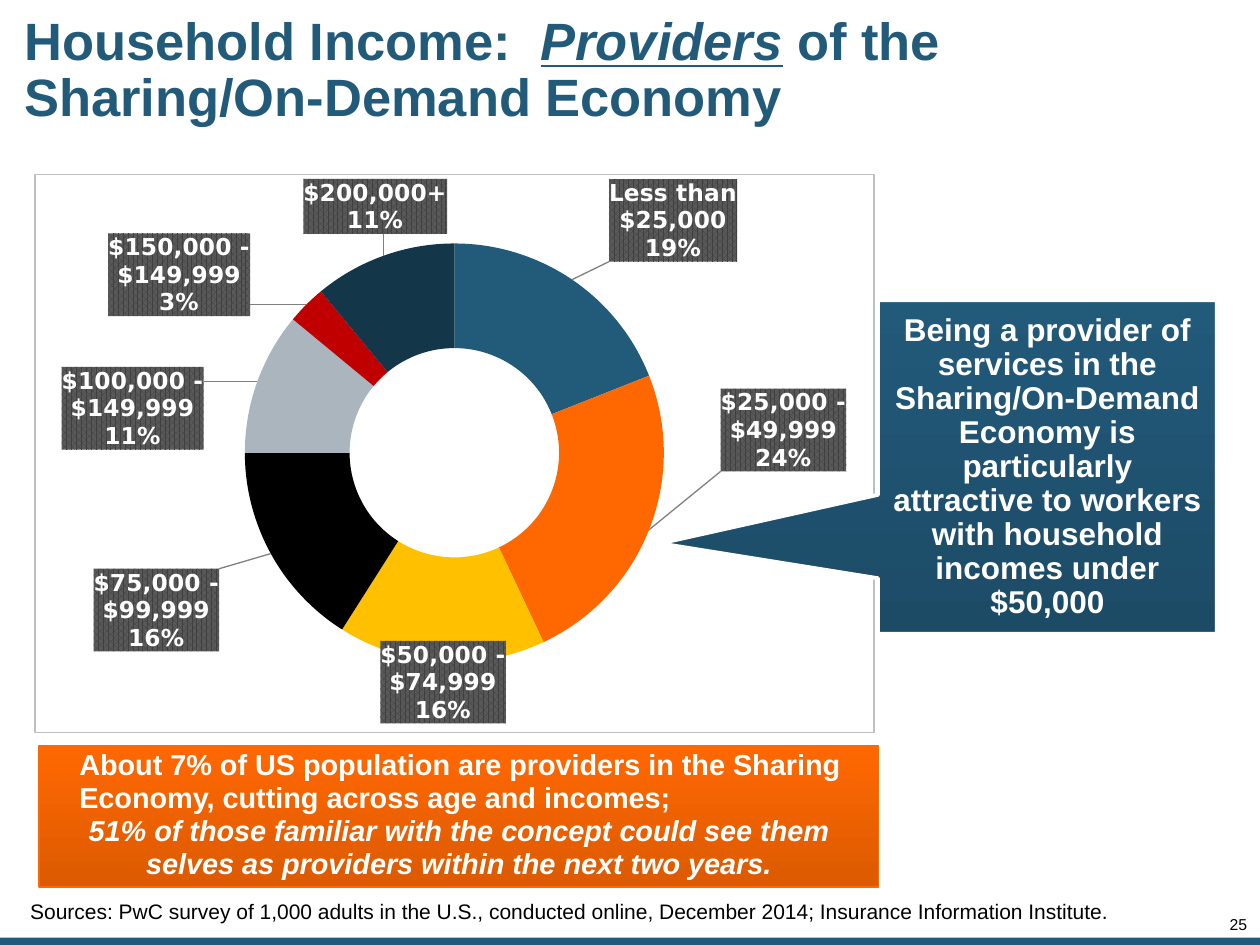
from dataclasses import dataclass
from itertools import accumulate
from math import cos, pi, sin

from pptx import Presentation
from pptx.chart.data import CategoryChartData
from pptx.dml.color import RGBColor
from pptx.enum.chart import XL_CHART_TYPE
from pptx.enum.shapes import MSO_SHAPE
from pptx.enum.text import MSO_ANCHOR, PP_ALIGN
from pptx.oxml import parse_xml
from pptx.oxml.ns import nsdecls, qn
from pptx.util import Cm, Pt

BLUE, ORANGE, WHITE, BLACK = "225A7A", "FF6801", "FFFFFF", "000000"


@dataclass
class Area:
    left: float
    top: float
    width: float
    height: float

    def lengths(self) -> tuple:
        return Cm(self.left), Cm(self.top), Cm(self.width), Cm(self.height)


@dataclass
class Style:
    size: float
    color: str
    bold: bool = False
    spacing: float = 1.0
    align: PP_ALIGN = PP_ALIGN.LEFT


@dataclass
class Bracket:
    """An income bracket; the label centre is in cm from the ring centre."""
    name: str
    percent: int
    color: str
    label_x: float
    label_y: float


CHART_AREA = Area(0.69, 3.5, 16.94, 11.28)
PLOT_X, PLOT_Y, PLOT_WIDTH, PLOT_HEIGHT = 0.25, 0.124, 0.5, 0.75
MIDDLE_RADIUS = 0.75 * CHART_AREA.width * PLOT_WIDTH / 2

BRACKETS = [
    Bracket("Less than $25,000", 19, BLUE, 4.42, -4.7),
    Bracket("$25,000 - $49,999", 24, ORANGE, 6.65, -0.46),
    Bracket("$50,000 - $74,999", 16, "FFC000", -0.23, 4.64),
    Bracket("$75,000 - $99,999", 16, BLACK, -6.02, 3.18),
    Bracket("$100,000 - $149,999", 11, "ABB5BE", -6.5, -0.9),
    Bracket("$150,000 - $149,999", 3, "C00000", -5.56, -3.6),
    Bracket("$200,000+", 11, "143649", -1.6, -4.98),
]


def rgb(color: str) -> RGBColor:
    return RGBColor.from_string(color)


def set_frame(shape, insets: tuple, anchor=MSO_ANCHOR.TOP):
    """Set wrapping, insets (left, top, right, bottom in cm) and anchor."""
    frame = shape.text_frame
    frame.word_wrap = True
    frame.vertical_anchor = anchor
    (frame.margin_left, frame.margin_top,
     frame.margin_right, frame.margin_bottom) = map(Cm, insets)
    return frame


def style_paragraph(para, style: Style) -> None:
    para.alignment = style.align
    para.line_spacing = style.spacing
    para.font.name = "Arial"
    para.font.size = Pt(style.size)
    para.font.bold = style.bold
    para.font.color.rgb = rgb(style.color)


def add_text(page, area: Area, text: str, style: Style, insets: tuple) -> None:
    box = page.shapes.add_textbox(*area.lengths())
    para = set_frame(box, insets).paragraphs[0]
    para.text = text
    style_paragraph(para, style)


def add_panel(page, kind: MSO_SHAPE, area: Area, colors: tuple,
              line: str, line_width: float):
    """Add a shape with a gradient running from top to bottom."""
    panel = page.shapes.add_shape(kind, *area.lengths())
    panel.shadow.inherit = False
    panel.fill.gradient()
    panel.fill.gradient_angle = 270
    for stop, color in zip(panel.fill.gradient_stops, colors):
        stop.color.rgb = rgb(color)
    panel.line.color.rgb = rgb(line)
    panel.line.width = Pt(line_width)
    return panel


def label_xml(index: int, bracket: Bracket, middle: float) -> str:
    """Place a label by its offset from the middle of its ring segment."""
    angle = 2 * pi * middle / 100
    x = (bracket.label_x - MIDDLE_RADIUS * sin(angle)) / CHART_AREA.width
    y = (bracket.label_y + MIDDLE_RADIUS * cos(angle)) / CHART_AREA.height
    return (f'<c:dLbl><c:idx val="{index}"/><c:layout><c:manualLayout>'
            f'<c:x val="{x:.4f}"/><c:y val="{y:.4f}"/></c:manualLayout></c:layout>'
            f'{LABEL_FORMAT}</c:dLbl>')


LABEL_FORMAT = (
    '<c:spPr><a:pattFill prst="pct75"><a:fgClr><a:srgbClr val="404040"/></a:fgClr>'
    '<a:bgClr><a:srgbClr val="595959"/></a:bgClr></a:pattFill></c:spPr>'
    '<c:txPr><a:bodyPr/><a:p><a:pPr><a:defRPr sz="1330" b="1"><a:solidFill>'
    f'<a:srgbClr val="{WHITE}"/></a:solidFill><a:latin typeface="DejaVu Sans"/>'
    '</a:defRPr></a:pPr><a:endParaRPr lang="en-US"/></a:p></c:txPr>'
    '<c:showLegendKey val="0"/><c:showVal val="0"/><c:showCatName val="1"/>'
    '<c:showSerName val="0"/><c:showPercent val="1"/><c:showBubbleSize val="0"/>'
    '<c:separator>\n</c:separator>')


def add_income_chart(page) -> None:
    data = CategoryChartData()
    data.categories = [bracket.name for bracket in BRACKETS]
    data.add_series("Series 1", [bracket.percent for bracket in BRACKETS])
    chart = page.shapes.add_chart(
        XL_CHART_TYPE.DOUGHNUT, *CHART_AREA.lengths(), data).chart
    chart.has_title = False
    chart.has_legend = False
    chart.font.size = Pt(10)
    chart.font.name = "DejaVu Sans"
    chart.font.color.rgb = rgb(BLACK)
    plot = chart.plots[0]
    plot.vary_by_categories = True
    series = plot.series[0]
    for index, bracket in enumerate(BRACKETS):
        fill = series.points[index].format.fill
        fill.solid()
        fill.fore_color.rgb = rgb(bracket.color)

    # Labels with leader lines
    ends = accumulate(bracket.percent for bracket in BRACKETS)
    labels = "".join(label_xml(index, bracket, end - bracket.percent / 2)
                     for index, (bracket, end) in enumerate(zip(BRACKETS, ends)))
    series._element.find(qn("c:cat")).addprevious(parse_xml(
        f'<c:dLbls {nsdecls("c", "a")}>{labels}{LABEL_FORMAT}'
        '<c:showLeaderLines val="1"/><c:leaderLines><c:spPr><a:ln w="9525">'
        '<a:solidFill><a:srgbClr val="808080"/></a:solidFill></a:ln></c:spPr>'
        '</c:leaderLines></c:dLbls>'))

    # Hole, plot position and outer border
    plot._element.find(qn("c:holeSize")).set("val", "50")
    plot_area = plot._element.getparent()
    for layout in plot_area.findall(qn("c:layout")):
        plot_area.remove(layout)
    plot_area.insert(0, parse_xml(
        f'<c:layout {nsdecls("c")}><c:manualLayout><c:layoutTarget val="inner"/>'
        '<c:xMode val="edge"/><c:yMode val="edge"/>'
        f'<c:x val="{PLOT_X}"/><c:y val="{PLOT_Y}"/><c:w val="{PLOT_WIDTH}"/>'
        f'<c:h val="{PLOT_HEIGHT}"/></c:manualLayout></c:layout>'))
    plot_area.getparent().addnext(parse_xml(
        f'<c:spPr {nsdecls("c", "a")}><a:noFill/><a:ln w="9525"><a:solidFill>'
        '<a:srgbClr val="BFBFBF"/></a:solidFill></a:ln></c:spPr>'))


def main() -> None:
    deck = Presentation()
    deck.slide_width, deck.slide_height = Cm(25.4), Cm(19.05)
    page = deck.slides.add_slide(deck.slide_layouts[6])

    # Footer bar and page number
    bar = page.shapes.add_shape(MSO_SHAPE.RECTANGLE, *Area(0, 18.9, 25.4, 0.15).lengths())
    bar.shadow.inherit = False
    bar.fill.solid()
    bar.fill.fore_color.rgb = rgb(BLUE)
    bar.line.fill.background()
    add_text(page, Area(23.9, 18.49, 1.24, 0.33), "25",
             Style(9, BLACK, spacing=0.85, align=PP_ALIGN.RIGHT), (0, 0, 0, 0))

    # Title
    title = page.shapes.add_textbox(*Area(0.36, 0.25, 23.32, 2.39).lengths())
    para = set_frame(title, (0.13,) * 4, MSO_ANCHOR.MIDDLE).paragraphs[0]
    style_paragraph(para, Style(30, BLUE, True, 0.9))
    para.add_run().text = "Household Income:  "
    span = para.add_run()
    span.text = "Providers"
    span.font.italic = span.font.underline = True
    para.add_run().text = " of the Sharing/On-Demand Economy"

    add_text(page, Area(0.36, 17.98, 22.56, 0.76),
             "Sources: PwC survey of 1,000 adults in the U.S., conducted online, "
             "December 2014; Insurance Information Institute.",
             Style(12, BLACK), (0.25, 0.13, 0.25, 0.13))
    add_income_chart(page)

    # Callout pointing at the lower brackets
    callout = add_panel(page, MSO_SHAPE.RECTANGULAR_CALLOUT,
                        Area(17.7, 6.05, 6.83, 6.73), (BLUE, "1C4B66"), WHITE, 2.25)
    callout.adjustments[0], callout.adjustments[1] = -1.143, 0.229
    para = set_frame(callout, (0.25,) * 4, MSO_ANCHOR.MIDDLE).paragraphs[0]
    para.text = ("Being a provider of services in the Sharing/On-Demand Economy is "
                 "particularly attractive to workers with household incomes under $50,000")
    style_paragraph(para, Style(18, WHITE, True, 0.9, PP_ALIGN.CENTER))

    # Summary banner
    banner = add_panel(page, MSO_SHAPE.RECTANGLE, Area(0.79, 15.04, 16.92, 2.84),
                       (ORANGE, "DC5A01"), ORANGE, 1)
    frame = set_frame(banner, (0.25, 0.13, 0.25, 0.18), MSO_ANCHOR.MIDDLE)
    fact, outlook = frame.paragraphs[0], frame.add_paragraph()
    fact.text = ("About 7% of US population are providers in the Sharing Economy, "
                 "cutting across age and incomes;")
    style_paragraph(fact, Style(16.5, WHITE, True, 0.95))
    fact._p.get_or_add_pPr().set("marL", str(Cm(0.56)))
    outlook.text = ("51% of those familiar with the concept could see them selves "
                    "as providers within the next two years.")
    style_paragraph(outlook, Style(16.5, WHITE, True, 0.95, PP_ALIGN.CENTER))
    outlook.font.italic = True

    deck.save("out.pptx")


if __name__ == "__main__":
    main()
